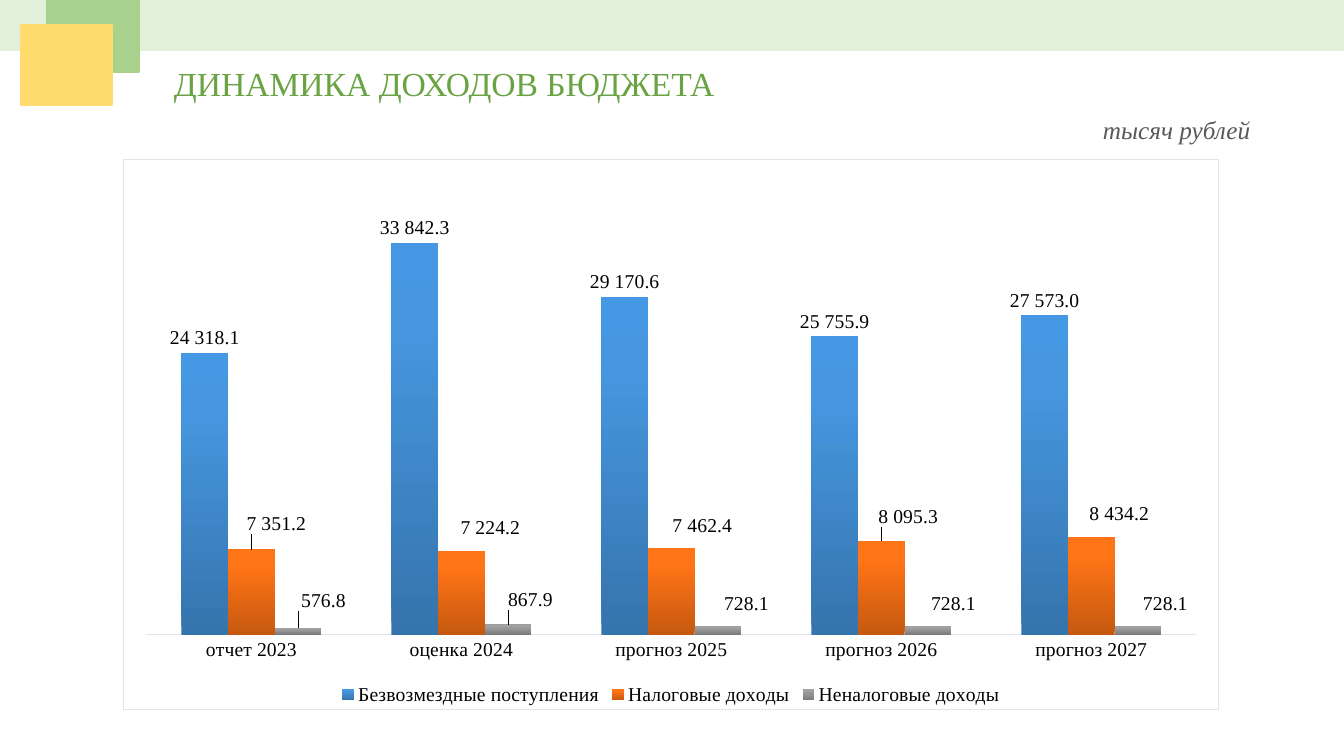
from copy import deepcopy
from dataclasses import dataclass

from pptx import Presentation
from pptx.chart.data import CategoryChartData
from pptx.dml.color import RGBColor
from pptx.enum.chart import XL_CHART_TYPE, XL_LABEL_POSITION, XL_LEGEND_POSITION, XL_TICK_MARK
from pptx.enum.shapes import MSO_SHAPE
from pptx.enum.text import MSO_AUTO_SIZE
from pptx.oxml import parse_xml
from pptx.oxml.ns import nsdecls, qn
from pptx.util import Emu, Pt

RECT = MSO_SHAPE.RECTANGLE
COLUMN = XL_CHART_TYPE.COLUMN_CLUSTERED
OUTSIDE = XL_LABEL_POSITION.OUTSIDE_END
BOTTOM = XL_LEGEND_POSITION.BOTTOM
NO_TICK = XL_TICK_MARK.NONE
GROW = MSO_AUTO_SIZE.SHAPE_TO_FIT_TEXT

SCALE = 914400 / 100.8


def px(n):
    return Emu(round(n * SCALE))


def rgb(code):
    return RGBColor.from_string(code)


@dataclass(frozen=True)
class Theme:
    font: str = "Times New Roman"
    title: str = "6AA343"
    unit: str = "595959"
    ink: str = "000000"
    paper: str = "FFFFFF"
    rule: str = "E0E5EB"
    band: str = "E2F0D9"
    leaf: str = "A9D18E"
    sun: str = "FFDC6D"
    blue: tuple = ("3674AD", "4697E0", "4498E4")
    orange: tuple = ("C65910", "FF7416", "FF7517")
    grey: tuple = ("7B7B7B", "A0A0A0", "A1A1A1")
    big: int = 24
    mid: int = 18
    small: int = 14
    number: str = "#\\ ##0.0"


YEARS = ["отчет 2023", "оценка 2024", "прогноз 2025", "прогноз 2026", "прогноз 2027"]
# Name, theme colour, values, label shifts in px
INCOME = [
    ("Безвозмездные поступления", "blue", (24318.1, 33842.3, 29170.6, 25755.9, 27573.0), ()),
    ("Налоговые доходы", "orange", (7351.2, 7224.2, 7462.4, 8095.3, 8434.2),
     ((25, -11), (29, -8), (31, -8), (27, -9), (28, -8))),
    ("Неналоговые доходы", "grey", (576.8, 867.9, 728.1, 728.1, 728.1),
     ((23, -12), (20, -10), (26, -8), (23, -8), (25, -8))),
]


class Deck:
    def __init__(self, theme):
        self.theme = theme
        self.file = Presentation()
        self.file.slide_width, self.file.slide_height = px(1344), px(756)
        self.slide = self.file.slides.add_slide(self.file.slide_layouts[6])

    def rect(self, box, color):
        shape = self.slide.shapes.add_shape(RECT, *map(px, box))
        shape.shadow.inherit = False
        shape.fill.solid()
        shape.fill.fore_color.rgb = rgb(color)
        shape.line.color.rgb = rgb(color)
        shape.line.width = Pt(1)

    def text(self, box, words, size, color, italic=False):
        frame = self.slide.shapes.add_textbox(*map(px, box)).text_frame
        frame.word_wrap = False
        frame.auto_size = GROW
        run = frame.paragraphs[0].add_run()
        run.text = words
        self.style(run.font, size, color)
        run.font.italic = italic

    def style(self, font, size, color):
        font.name, font.size = self.theme.font, Pt(size)
        font.color.rgb = rgb(color)

    def chart(self, box, plot, cats, rows, top):
        theme = self.theme
        data = CategoryChartData(number_format=theme.number)
        data.categories = cats
        for name, _, vals, _ in rows:
            data.add_series(name, vals)
        chart = self.slide.shapes.add_chart(COLUMN, *map(px, box), data).chart
        chart.has_title = False
        self.style(chart.font, theme.small, theme.ink)
        self.frame(chart)
        self.place(chart, box, plot)
        chart.has_legend = True
        chart.legend.position = BOTTOM
        chart.legend.include_in_layout = False

        axis = chart.category_axis
        axis.major_tick_mark = axis.minor_tick_mark = NO_TICK
        axis.format.line.color.rgb = rgb(theme.rule)
        axis.format.line.width = Pt(0.75)
        scale = chart.value_axis
        scale.minimum_scale, scale.maximum_scale = 0, top
        scale.has_major_gridlines = False
        scale.visible = False

        bars = chart.plots[0]
        bars.gap_width, bars.overlap = 150, 0
        bars.vary_by_categories = False
        for series, (_, color, _, shifts) in zip(bars.series, rows):
            self.shade(series.format.fill, getattr(theme, color))
            self.label(series, shifts, box)

    def frame(self, chart):
        """Fill and outline the whole chart area."""
        theme = self.theme
        chart.font._element.getparent()
        area = parse_xml(
            f'<c:spPr {nsdecls("c", "a")}>'
            f'<a:solidFill><a:srgbClr val="{theme.paper}"/></a:solidFill>'
            f'<a:ln w="{Pt(0.75)}"><a:solidFill><a:srgbClr val="{theme.rule}"/>'
            '</a:solidFill></a:ln></c:spPr>')
        chart._chartSpace.find(qn("c:txPr")).addprevious(area)

    def place(self, chart, box, plot):
        """Fix the inner plot area, given in slide px."""
        x, y, w, h = plot
        parts = {"x": (x - box[0]) / box[2], "y": (y - box[1]) / box[3],
                 "w": w / box[2], "h": h / box[3]}
        tags = "".join(f'<c:{key}Mode val="edge"/>' for key in "xy")
        tags += "".join(f'<c:{key} val="{val:.4f}"/>' for key, val in parts.items())
        area = chart._chartSpace.chart.plotArea
        for old in area.findall(qn("c:layout")):
            area.remove(old)
        area.insert(0, parse_xml(
            f'<c:layout {nsdecls("c")}><c:manualLayout>'
            f'<c:layoutTarget val="inner"/>{tags}</c:manualLayout></c:layout>'))

    def shade(self, fill, colors):
        """Apply a three-stop gradient that rises from the base."""
        fill.gradient()
        fill.gradient_angle = 90
        first = fill.gradient_stops[0]._gs
        first.addnext(deepcopy(first))
        for stop, spot, color in zip(fill.gradient_stops, (0, 0.8, 1), colors):
            stop.position = spot
            stop.color.rgb = rgb(color)

    def label(self, series, shifts, box):
        """Show values, moving each label by its shift."""
        theme = self.theme
        labels = series.data_labels
        labels.show_value = True
        labels.position = OUTSIDE
        labels.number_format = theme.number
        labels.number_format_is_linked = False
        self.style(labels.font, theme.small, theme.ink)
        for i, _ in enumerate(shifts):
            note = series.points[i].data_label
            note.position = OUTSIDE
            self.style(note.font, theme.small, theme.ink)
        for (dx, dy), tag in zip(shifts, labels._element.findall(qn("c:dLbl"))):
            move = parse_xml(
                f'<c:layout {nsdecls("c")}><c:manualLayout>'
                f'<c:x val="{dx / box[2]:.4f}"/><c:y val="{dy / box[3]:.4f}"/>'
                '</c:manualLayout></c:layout>')
            form = parse_xml(f'<c:numFmt {nsdecls("c")} formatCode="{theme.number}" sourceLinked="0"/>')
            tag.find(qn("c:idx")).addnext(move)
            move.addnext(form)


def main():
    theme = Theme()
    deck = Deck(theme)
    deck.text((164, 58, 566, 50), "ДИНАМИКА ДОХОДОВ БЮДЖЕТА", theme.big, theme.title)
    deck.rect((0, 0, 1344, 50), theme.band)
    deck.rect((47, 0, 92, 72), theme.leaf)
    deck.rect((21, 25, 91, 80), theme.sun)
    deck.text((1093, 109, 169, 40), "тысяч рублей", theme.mid, theme.unit, italic=True)
    deck.chart((123, 159, 1096, 551), (146, 171, 1051, 464), YEARS, INCOME, 40000)
    deck.file.save("out.pptx")


if __name__ == "__main__":
    main()
